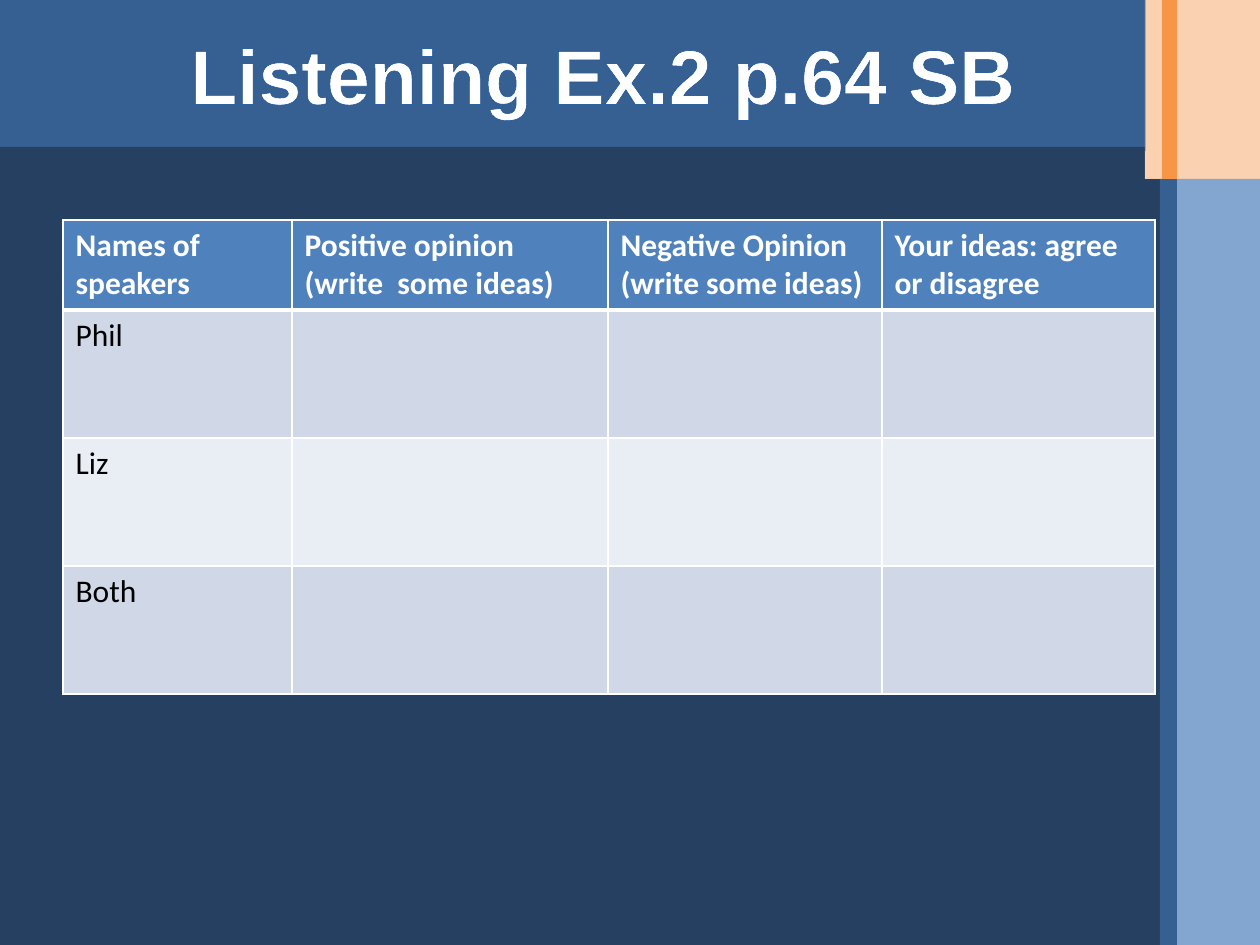
from typing import NamedTuple

from lxml import etree
from pptx import Presentation
from pptx.dml.color import RGBColor
from pptx.enum.shapes import MSO_SHAPE
from pptx.enum.text import MSO_ANCHOR, PP_ALIGN
from pptx.oxml.ns import qn
from pptx.util import Emu, Pt

RECTANGLE = MSO_SHAPE.RECTANGLE
MIDDLE = MSO_ANCHOR.MIDDLE
CENTER = PP_ALIGN.CENTER

PX_PER_INCH = 126
EMU_PER_PX = 914400 / PX_PER_INCH

WHITE = "FFFFFF"
BLACK = "000000"
NAVY = "254061"
MID_BLUE = "376092"
ACCENT_BLUE = "4F81BD"
BAND_FILLS = ("D0D8E8", "E9EDF4")


class Panel(NamedTuple):
    left: int
    top: int
    width: int
    height: int
    fill: str
    opacity: int = 100


class TextStyle(NamedTuple):
    font: str
    size: int
    color: str
    bold: bool


PANELS = [
    Panel(-1, 0, 1147, 151, MID_BLUE),
    Panel(0, 147, 1145, 798, NAVY),
    Panel(1138, 179, 22, 766, NAVY),
    Panel(1145, 0, 115, 179, "FAC090", 70),
    Panel(1177, 179, 83, 766, ACCENT_BLUE, 70),
    Panel(1160, 179, 17, 766, MID_BLUE),
    Panel(1162, 0, 15, 179, "F79646"),
]

TITLE_STYLE = TextStyle("Arial", 44, WHITE, True)
HEADER_STYLE = TextStyle("Calibri", 18, WHITE, True)
BODY_STYLE = TextStyle("Calibri", 18, BLACK, False)

HEADERS = [
    ["Names of speakers"],
    ["Positive opinion (write  some ideas)"],
    ["Negative Opinion", "(write some ideas)"],
    ["Your ideas: agree or disagree"],
]
SPEAKERS = ["Phil", "Liz", "Both"]
COLUMN_WIDTHS = [229, 316, 274, 273]
ROW_HEIGHTS = [90] + [128] * len(SPEAKERS)
TABLE_LEFT, TABLE_TOP = 63, 220


def px(length: int) -> Emu:
    return Emu(round(length * EMU_PER_PX))


def rgb(color: str) -> RGBColor:
    return RGBColor.from_string(color)


def add_line(parent, tag: str, color: str, width: float) -> None:
    """Append a solid line element, such as a cell border or text outline."""
    line = etree.SubElement(parent, qn(tag), w=str(Pt(width)))
    fill = etree.SubElement(line, qn("a:solidFill"))
    etree.SubElement(fill, qn("a:srgbClr"), val=color)


def add_styled_run(paragraph, text: str, style: TextStyle):
    run = paragraph.add_run()
    run.text = text
    run.font.name = style.font
    run.font.size = Pt(style.size)
    run.font.bold = style.bold
    run.font.color.rgb = rgb(style.color)
    return run


def add_panel(slide, panel: Panel) -> None:
    shape = slide.shapes.add_shape(
        RECTANGLE, px(panel.left), px(panel.top), px(panel.width), px(panel.height)
    )
    shape.shadow.inherit = False
    shape.line.fill.background()
    shape.fill.solid()
    shape.fill.fore_color.rgb = rgb(panel.fill)
    if panel.opacity < 100:
        color = shape.fill._xPr.find(f".//{qn('a:srgbClr')}")
        etree.SubElement(color, qn("a:alpha"), val=str(panel.opacity * 1000))


def add_title(slide, text: str) -> None:
    box = slide.shapes.add_textbox(px(63), px(0), px(1081), px(147))
    frame = box.text_frame
    frame.word_wrap = True
    frame.vertical_anchor = MIDDLE
    paragraph = frame.paragraphs[0]
    paragraph.alignment = CENTER
    run = add_styled_run(paragraph, text, TITLE_STYLE)
    properties = run.font._element
    add_line(properties, "a:ln", "054697", 1)
    properties.insert(0, properties[-1])


def fill_cell(cell, lines: list[str], style: TextStyle, fill: str,
              top_border: int, bottom_border: int) -> None:
    properties = cell._tc.get_or_add_tcPr()
    borders = {"L": 1, "R": 1, "T": top_border, "B": bottom_border}
    for side, width in borders.items():
        add_line(properties, f"a:ln{side}", WHITE, width)
    cell.fill.solid()
    cell.fill.fore_color.rgb = rgb(fill)
    frame = cell.text_frame
    for index, line in enumerate(lines):
        paragraph = frame.add_paragraph() if index else frame.paragraphs[0]
        add_styled_run(paragraph, line, style)


def add_opinion_table(slide) -> None:
    table = slide.shapes.add_table(
        len(ROW_HEIGHTS), len(COLUMN_WIDTHS), px(TABLE_LEFT), px(TABLE_TOP),
        px(sum(COLUMN_WIDTHS)), px(sum(ROW_HEIGHTS)),
    ).table
    for column, width in zip(table.columns, COLUMN_WIDTHS):
        column.width = px(width)
    for row, height in zip(table.rows, ROW_HEIGHTS):
        row.height = px(height)
    for column, lines in enumerate(HEADERS):
        fill_cell(table.cell(0, column), lines, HEADER_STYLE, ACCENT_BLUE, 1, 3)
    for row, speaker in enumerate(SPEAKERS, start=1):
        fill = BAND_FILLS[(row - 1) % 2]
        for column in range(len(HEADERS)):
            lines = [speaker] if column == 0 else []
            top_border = 3 if row == 1 else 1
            fill_cell(table.cell(row, column), lines, BODY_STYLE, fill, top_border, 1)


def main() -> None:
    presentation = Presentation()
    presentation.slide_width = px(1260)
    presentation.slide_height = px(945)
    slide = presentation.slides.add_slide(presentation.slide_layouts[6])
    for panel in PANELS:
        add_panel(slide, panel)
    add_title(slide, "Listening Ex.2 p.64 SB")
    add_opinion_table(slide)
    presentation.save("out.pptx")


if __name__ == "__main__":
    main()
